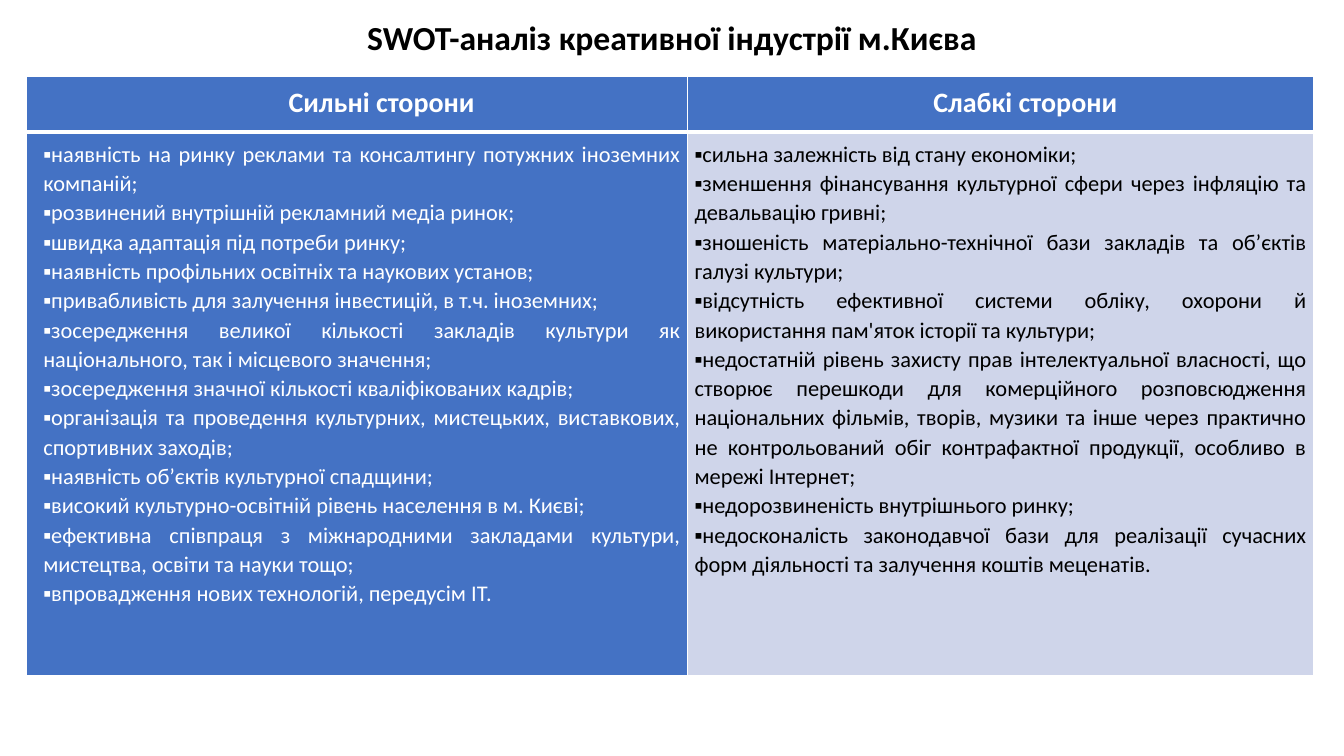
"""Build a one-page SWOT table of strengths and weaknesses."""
from lxml import etree
from pptx import Presentation
from pptx import oxml
from pptx.dml.color import RGBColor
from pptx.enum import text
from pptx.util import Inches, Pt

BLUE, PALE, WHITE, BLACK = "4472C4", "CFD5EA", "FFFFFF", "000000"
STRENGTHS = [
    "наявність на ринку реклами та консалтингу потужних іноземних компаній;",
    "розвинений внутрішній рекламний медіа ринок;",
    "швидка адаптація під потреби ринку;",
    "наявність профільних освітніх та наукових установ;",
    "привабливість для залучення інвестицій, в т.ч. іноземних;",
    "зосередження великої кількості закладів культури як національного, так і місцевого значення;",
    "зосередження значної кількості кваліфікованих кадрів;",
    "організація та проведення культурних, мистецьких, виставкових, спортивних заходів;",
    "наявність об’єктів культурної спадщини;",
    "високий культурно-освітній рівень населення в м. Києві;",
    "ефективна співпраця з міжнародними закладами культури, мистецтва, освіти та науки тощо;",
    "впровадження нових технологій, передусім ІТ.",
]
WEAKNESSES = [
    "сильна залежність від стану економіки;",
    "зменшення фінансування культурної сфери через інфляцію та девальвацію гривні;",
    "зношеність матеріально-технічної бази закладів та об’єктів галузі культури;",
    "відсутність ефективної системи обліку, охорони й використання пам'яток історії та культури;",
    "недостатній рівень захисту прав інтелектуальної власності, що створює перешкоди "
    "для комерційного розповсюдження національних фільмів, творів, музики та інше через "
    "практично не контрольований обіг контрафактної продукції, особливо в мережі Інтернет;",
    "недорозвиненість внутрішнього ринку;",
    "недосконалість законодавчої бази для реалізації сучасних форм діяльності "
    "та залучення коштів меценатів.",
]


def color(value):
    return RGBColor.from_string(value)


def write(para, words, size=16, ink=BLACK, bold=False, align=text.PP_ALIGN.JUSTIFY,
          spacing=None, margin=0, indent=0, bullet=None):
    para.alignment = align
    if spacing:
        para.line_spacing = spacing
    span = para.add_run()
    span.text = words
    span.font.name, span.font.size, span.font.bold = "Calibri", Pt(size), bold
    span.font.color.rgb = color(ink)
    props = para._p.get_or_add_pPr()
    props.set("marL", str(Inches(margin)))
    props.set("indent", str(Inches(indent)))
    if bullet:
        etree.SubElement(props, oxml.ns.qn("a:buFont")).set("typeface", "Calibri")
        etree.SubElement(props, oxml.ns.qn("a:buChar")).set("char", bullet)


class Page:
    def __init__(self, deck):
        self.slide = deck.slides.add_slide(deck.slide_layouts[6])
        self.inset = Inches(0.07)

    def title(self, words, left, top, width, height):
        box = self.slide.shapes.add_textbox(
            Inches(left), Inches(top), Inches(width), Inches(height))
        frame = box.text_frame
        frame.word_wrap = True
        frame.vertical_anchor = text.MSO_ANCHOR.MIDDLE
        write(frame.paragraphs[0], words, size=24, bold=True,
              align=text.PP_ALIGN.CENTER, indent=0.03)

    def table(self, left, top, widths, heights):
        frame = self.slide.shapes.add_table(
            len(heights), len(widths), Inches(left), Inches(top),
            Inches(sum(widths)), Inches(sum(heights)))
        table = frame.table
        for column, width in zip(table.columns, widths):
            column.width = Inches(width)
        for row, height in zip(table.rows, heights):
            row.height = Inches(height)
        return table

    def cell(self, cell, lines, fill, top=1, bottom=1, **style):
        cell.fill.solid()
        cell.fill.fore_color.rgb = color(fill)
        cell.margin_left = cell.margin_right = self.inset
        cell.margin_top = cell.margin_bottom = self.inset
        self.borders(cell, L=1, R=1, T=top, B=bottom)
        frame = cell.text_frame
        for number, line in enumerate(lines):
            para = frame.add_paragraph() if number else frame.paragraphs[0]
            write(para, line, spacing=1.07, **style)

    def borders(self, cell, **weights):
        props = cell._tc.get_or_add_tcPr()
        for place, (side, weight) in enumerate(weights.items()):
            line = etree.Element(oxml.ns.qn(f"a:ln{side}"), w=str(Pt(weight)))
            fill = etree.SubElement(line, oxml.ns.qn("a:solidFill"))
            etree.SubElement(fill, oxml.ns.qn("a:srgbClr")).set("val", WHITE)
            props.insert(place, line)


def main():
    deck = Presentation()
    deck.slide_width, deck.slide_height = Inches(13.33), Inches(7.5)
    page = Page(deck)
    page.title("SWOT-аналіз креативної індустрії м.Києва", 0.74, 0, 11.82, 0.74)
    table = page.table(0.26, 0.76, widths=[6.56, 6.21], heights=[0.55, 5.39])
    columns = [
        ("Сильні сторони", STRENGTHS, BLUE, WHITE, 0.1),
        ("Слабкі сторони", WEAKNESSES, PALE, BLACK, 0),
    ]
    for number, (heading, points, fill, ink, margin) in enumerate(columns):
        page.cell(table.cell(0, number), [heading], BLUE, bottom=3, size=20, ink=WHITE,
                  bold=True, align=text.PP_ALIGN.CENTER, indent=0.49)
        page.cell(table.cell(1, number), points, fill, top=3, ink=ink,
                  margin=margin, bullet="▪")
    deck.save("out.pptx")


if __name__ == "__main__":
    main()
